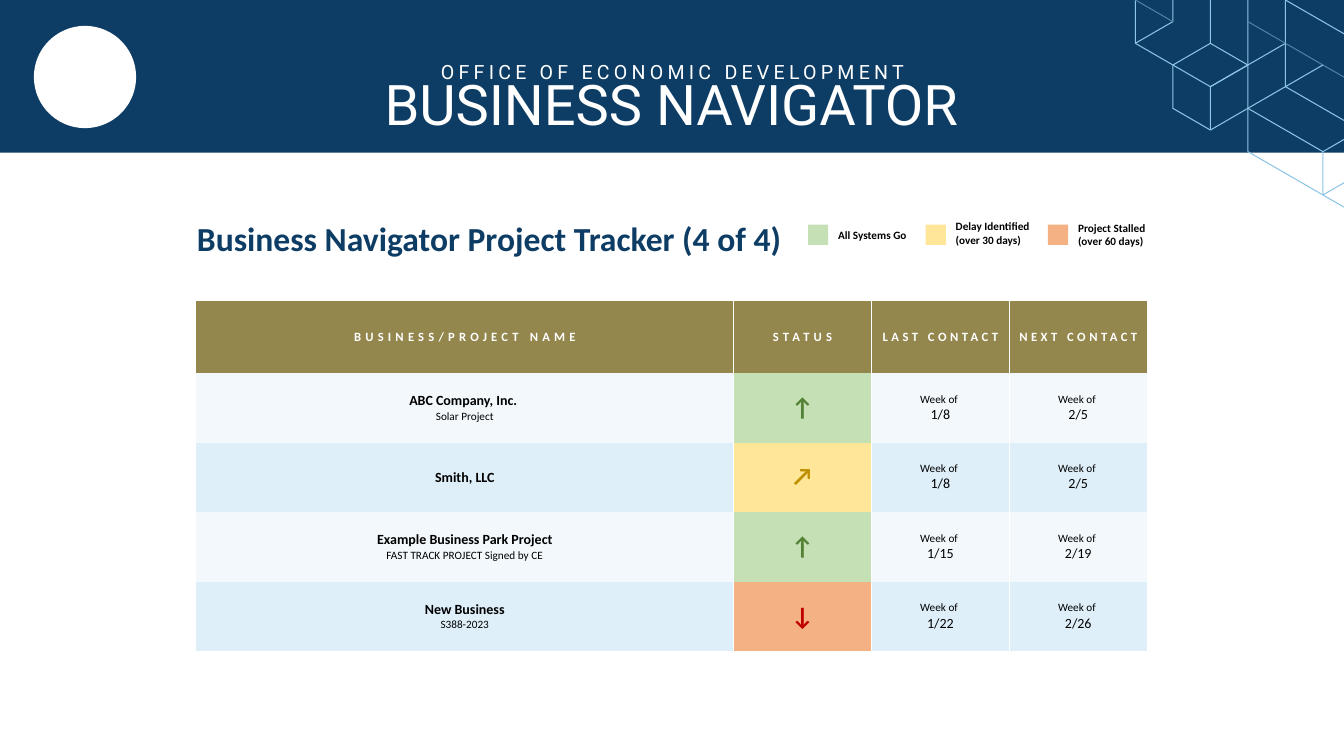
"""Build the Business Navigator project tracker slide."""
import pptx
import pptx.util
import pptx.dml.color
import pptx.enum.shapes
import pptx.enum.text
import pptx.oxml
import pptx.oxml.ns

Pt = pptx.util.Pt
RGB = pptx.dml.color.RGBColor
SHAPE = pptx.enum.shapes.MSO_SHAPE
ALIGN = pptx.enum.text.PP_ALIGN
MID = pptx.enum.text.MSO_ANCHOR.MIDDLE
TOP = pptx.enum.text.MSO_ANCHOR.TOP

NAVY, SKY, DIM = RGB(13, 61, 101), RGB(141, 197, 230), RGB(77, 129, 166)
WHITE, BLACK, GOLD = RGB(255, 255, 255), RGB(0, 0, 0), RGB(147, 135, 77)
PALE, MIST = RGB(242, 248, 252), RGB(222, 239, 249)
GREEN, AMBER, CORAL = RGB(197, 224, 180), RGB(255, 230, 153), RGB(244, 177, 131)
LEAF, OCHRE, RED = RGB(84, 130, 53), RGB(191, 144, 0), RGB(192, 0, 0)

WIDE, HIGH, BAND = 960, 540, 109
TITLE = "Business Navigator Project Tracker (4 of 4)"
BANNER = [
    ("BUSINESS NAVIGATOR", (0, 34, 959, 64), 40, 0),
    ("OFFICE OF ECONOMIC DEVELOPMENT", (87, -4, 787, 57), 14, 3),
]
LEGEND = [
    (["All Systems Go"], 577.2, 159.8, GREEN),
    (["Delay Identified", "(over 30 days)"], 661.2, 153.4, AMBER),
    (["Project Stalled", "(over 60 days)"], 748.6, 154.4, CORAL),
]
HEADS = [("BUSINESS/PROJECT NAME", 3), ("STATUS", 3),
         ("LAST CONTACT", 2.5), ("NEXT CONTACT", 2.5)]
STATES = {"↑": (GREEN, LEAF), "↗": (AMBER, OCHRE), "↓": (CORAL, RED)}
ROWS = [
    ("ABC Company, Inc. ", "Solar Project", "↑", "1/8", "2/5"),
    ("Smith, LLC", "", "↗", "1/8", "2/5"),
    ("Example Business Park Project", "FAST TRACK PROJECT Signed by CE",
     "↑", "1/15", "2/19"),
    ("New Business", "S388-2023", "↓", "1/22", "2/26"),
]
COLS, TALL = [384, 98.5, 98.5, 98.5], [51.4] + [49.7] * 4
LEFT, HEAD = 140, 215

EDGE, STEP, RISE = 811, 26.8, 15.48
END = (WIDE - EDGE) / STEP
MESH = [
    (SKY, [[(2, 0), (2, 2), (1, 3), (1, 5), (2, 6), (3, 5), (3, 0)],
           [(1, 3), (2, 4), (2, 6)], [(2, 2), (3, 3), (4, 2), (4, 0)],
           [(2, 4), (3, 3)]]),
    (DIM, [[(3, 1), (END, END - 2)]]),
    (SKY, [[(4, 0), (END, END - 4)],
           [(0, 0), (0, 2), (1, 1), (1, 0)], [(0, 2), (1, 3)]]),
    (DIM, [[(0, 0), (1, 1)]]),
    (SKY, [[(4, 2), (4, 4), (3, 5), (3, 7), (END, END + 4)],
           [(3, 5), (5, 7), (5, 9), (END, 14 - END)],
           [(5, 3), (4, 4), (END, END)], [(5, 7), (END, 12 - END)],
           [(2, 4), (3, 3)]]),
]


def apply(item, form):
    """Set each attribute named in a dict."""
    for key, val in form.items():
        setattr(item, key, val)


def write(frame, lines, align=ALIGN.CENTER, lead=None):
    """Fill a text frame with (text, size, bold, colour, font, spacing) lines."""
    for num, (text, size, bold, hue, face, gap) in enumerate(lines):
        para = frame.add_paragraph() if num else frame.paragraphs[0]
        apply(para, {"alignment": align, "line_spacing": lead,
                     "space_before": Pt(0), "space_after": Pt(0)})
        run = para.add_run()
        run.text = text
        apply(run.font, {"size": Pt(size), "bold": bold, "name": face})
        run.font.color.rgb = hue
        if gap:
            run._r.get_or_add_rPr().set("spc", str(int(gap * 100)))


def block(slide, kind, box, hue):
    """Add a plain filled shape."""
    form = slide.shapes.add_shape(kind, *map(Pt, box))
    form.shadow.inherit = False
    form.fill.solid()
    form.fill.fore_color.rgb = hue
    form.line.fill.background()


def label(slide, box, lines, align=ALIGN.CENTER, lead=None):
    """Add a wrapped text box."""
    frame = slide.shapes.add_textbox(*map(Pt, box)).text_frame
    frame.word_wrap = True
    write(frame, lines, align, lead)


def lattice(slide, hue, strands):
    """Draw open strands of the mesh as one outline."""
    paths = [[(Pt(EDGE + STEP * col), Pt(RISE * row)) for col, row in strand]
             for strand in strands]
    pen = slide.shapes.build_freeform(*paths[0][0])
    for num, spots in enumerate(paths):
        if num:
            pen.move_to(*spots[0])
        pen.add_line_segments(spots[1:], close=False)
    form = pen.convert_to_shape()
    form.shadow.inherit = False
    form.fill.background()
    form.line.width = Pt(0.75)
    form.line.color.rgb = hue


def paint(cell, hue, lines, edge=True):
    """Fill one table cell and give it a white right border."""
    apply(cell, {"vertical_anchor": MID, "margin_left": 0, "margin_right": 0,
                 "margin_top": 0, "margin_bottom": 0})
    cell.fill.solid()
    cell.fill.fore_color.rgb = hue
    write(cell.text_frame, lines)
    if edge:
        cell._tc.get_or_add_tcPr().insert(0, pptx.oxml.parse_xml(
            f'<a:lnR {pptx.oxml.ns.nsdecls("a")} w="12700"><a:solidFill>'
            f'<a:srgbClr val="{WHITE}"/></a:solidFill></a:lnR>'))


def tracker(slide):
    """Add the project table."""
    box = (LEFT, HEAD, sum(COLS), sum(TALL))
    grid = slide.shapes.add_table(len(TALL), len(COLS), *map(Pt, box)).table
    grid._tbl.tblPr[0].text = "{2D5ABB26-0587-4C30-8999-92F81FD0307C}"
    for col, width in zip(grid.columns, COLS):
        col.width = Pt(width)
    for row, height in zip(grid.rows, TALL):
        row.height = Pt(height)
    for num, (text, gap) in enumerate(HEADS):
        paint(grid.cell(0, num), GOLD,
              [(text, 9, True, WHITE, "Calibri", gap)], num < 3)
    for num, (name, note, mark, last, due) in enumerate(ROWS, 1):
        back = PALE if num % 2 else MIST
        fill, ink = STATES[mark]
        lines = [(name, 10, True, BLACK, "Calibri", 0)]
        if note:
            lines.append((note, 8, False, BLACK, "Calibri", 0))
        paint(grid.cell(num, 0), back, lines)
        paint(grid.cell(num, 1), fill, [(mark, 18, True, ink, "Calibri", 0)])
        for col, date in enumerate((last, due), 2):
            paint(grid.cell(num, col), back,
                  [("Week of ", 8, False, BLACK, "Calibri", 0),
                   (date, 10, False, BLACK, "Calibri", 0)], col < 3)


def main():
    """Build and save the slide."""
    deck = pptx.Presentation()
    apply(deck, {"slide_width": Pt(WIDE), "slide_height": Pt(HIGH)})
    slide = deck.slides.add_slide(deck.slide_layouts[5])
    block(slide, SHAPE.RECTANGLE, (0, 0, WIDE, BAND), NAVY)
    block(slide, SHAPE.OVAL, (24.2, 18.5, 73, 73), WHITE)
    for hue, strands in MESH:
        lattice(slide, hue, strands)
    tracker(slide)
    title = slide.shapes.title
    apply(title, {"left": Pt(116.2), "top": Pt(152),
                  "width": Pt(466.5), "height": Pt(36)})
    apply(title.text_frame, {"word_wrap": True, "vertical_anchor": TOP})
    write(title.text_frame, [(TITLE, 24, True, NAVY, "Calibri", 0)])
    for names, left, top, hue in LEGEND:
        block(slide, SHAPE.RECTANGLE, (left, 160.5, 14.4, 14.4), hue)
        label(slide, (left + 14.4, top, 83.5, 7 + 10 * len(names)),
              [(name, 8, True, BLACK, "Calibri", 0) for name in names],
              ALIGN.LEFT)
    for text, box, size, gap in BANNER:
        label(slide, box, [(text, size, False, WHITE, "Roboto", gap)], lead=Pt(60))
    deck.save("out.pptx")


if __name__ == "__main__":
    main()
